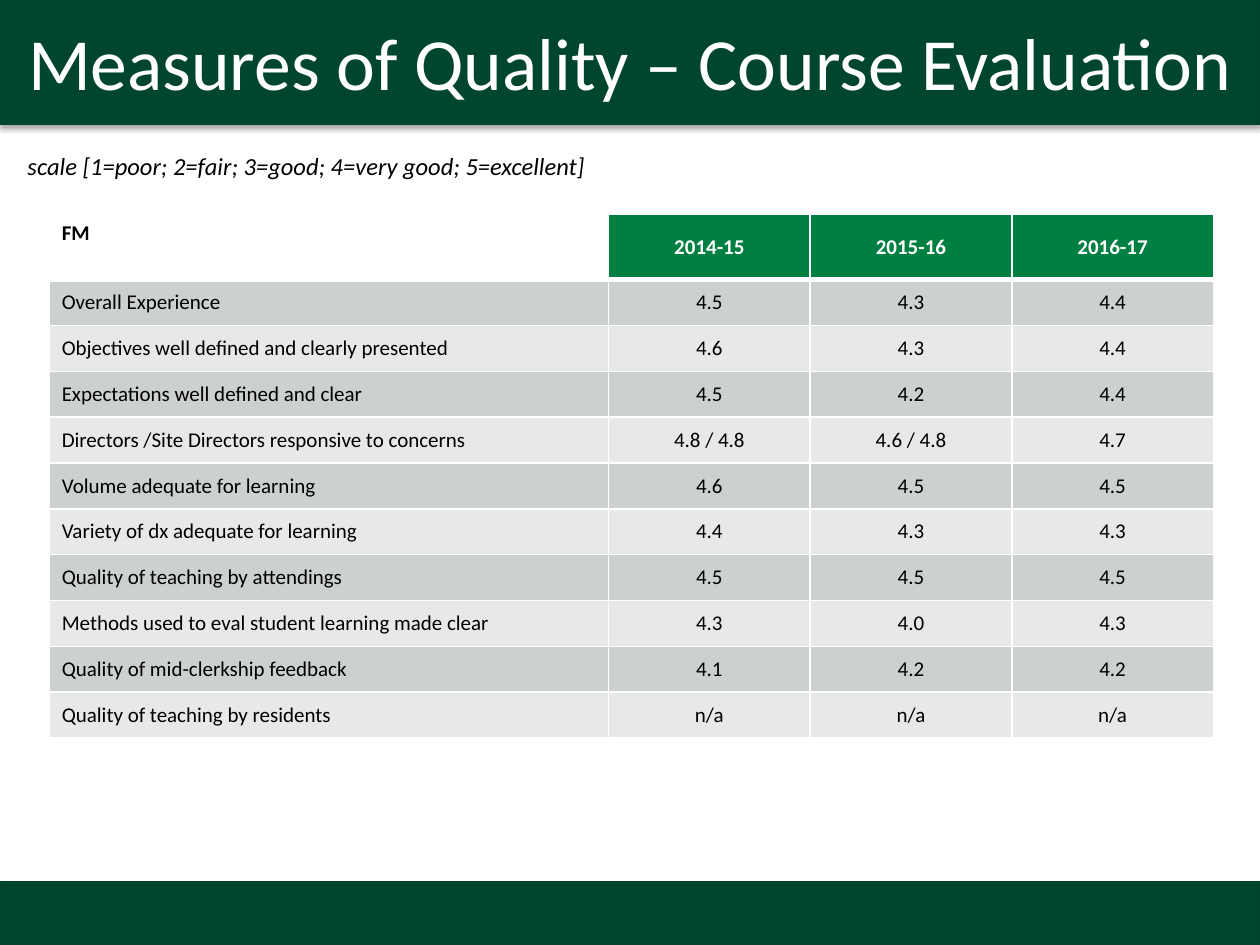
from lxml import etree
from pptx import Presentation
from pptx.dml.color import RGBColor
from pptx.enum.shapes import MSO_SHAPE
from pptx.enum.text import MSO_ANCHOR, MSO_AUTO_SIZE, PP_ALIGN
from pptx.oxml import parse_xml
from pptx.oxml.ns import nsdecls, qn
from pptx.util import Inches, Pt

RECT = MSO_SHAPE.RECTANGLE
TOP, MIDDLE = MSO_ANCHOR.TOP, MSO_ANCHOR.MIDDLE
LEFT, CENTER = PP_ALIGN.LEFT, PP_ALIGN.CENTER
NO_FIT = MSO_AUTO_SIZE.NONE
FONT = "Calibri"


def rgb(color):
    return RGBColor.from_string(color)


def style(p, size, color, align=LEFT, bold=False, italic=False):
    p.alignment = align
    p.font.name, p.font.size = FONT, Pt(size)
    p.font.bold, p.font.italic = bold, italic
    p.font.color.rgb = rgb(color)


prs = Presentation()
prs.slide_width, prs.slide_height = Inches(10), Inches(7.5)
s = prs.slides.add_slide(prs.slide_layouts[5])

# Green bars with a soft shadow
for top, height in ((0, 0.99), (7, 0.5)):
    sp = s.shapes.add_shape(RECT, 0, Inches(top), Inches(10), Inches(height))
    sp.fill.solid()
    sp.fill.fore_color.rgb = rgb("00462D")
    sp.line.color.rgb = rgb("00442D")
    sp.line.width = Pt(0.75)
    sp.shadow.inherit = False
    effects = sp._element.spPr.find(qn("a:effectLst"))
    effects.append(parse_xml(
        f'<a:outerShdw {nsdecls("a")} blurRad="{Pt(3.1)}" dist="{Pt(1.8)}" dir="5400000" '
        'rotWithShape="0"><a:srgbClr val="000000"><a:alpha val="35000"/></a:srgbClr>'
        '</a:outerShdw>'))

# Title, brought in front of the top bar
title = s.shapes.title
title.left, title.top = 0, 0
title.width, title.height = Inches(10), Inches(0.97)
s.shapes._spTree.append(title._element)
tf = title.text_frame
tf.text = "Measures of Quality – Course Evaluation"
tf.word_wrap = True
tf.auto_size = NO_FIT
tf.vertical_anchor = MIDDLE
style(tf.paragraphs[0], 42, "FFFFFF", CENTER)

# Rating scale
box = s.shapes.add_textbox(Inches(0.12), Inches(1.15), Inches(9.5), Inches(0.8))
tf = box.text_frame
tf.word_wrap = True
tf.text = "scale [1=poor; 2=fair; 3=good; 4=very good; 5=excellent]"
style(tf.paragraphs[0], 14, "000000", italic=True)

# Evaluation table
rows = [
    ("FM", "2014-15", "2015-16", "2016-17"),
    ("Overall Experience", "4.5", "4.3", "4.4"),
    ("Objectives well defined and clearly presented", "4.6", "4.3", "4.4"),
    ("Expectations well defined and clear", "4.5", "4.2", "4.4"),
    ("Directors /Site Directors responsive to concerns", "4.8 / 4.8", "4.6 / 4.8", "4.7"),
    ("Volume adequate for learning", "4.6", "4.5", "4.5"),
    ("Variety of dx adequate for learning", "4.4", "4.3", "4.3"),
    ("Quality of teaching by attendings", "4.5", "4.5", "4.5"),
    ("Methods used to eval student learning made clear", "4.3", "4.0", "4.3"),
    ("Quality of mid-clerkship feedback", "4.1", "4.2", "4.2"),
    ("Quality of teaching by residents", "n/a", "n/a", "n/a"),
]
table = s.shapes.add_table(len(rows), len(rows[0]), Inches(0.39), Inches(1.7),
                           Inches(9.24), Inches(4.16)).table
for col, width in zip(table.columns, (4.44, 1.6, 1.6, 1.6)):
    col.width = Inches(width)

for i, row in enumerate(rows):
    header = i == 0
    table.rows[i].height = Inches(0.52 if header else 0.364)
    for j, text in enumerate(row):
        cell = table.cell(i, j)
        corner = header and j == 0
        cell.text = text
        cell.vertical_anchor = TOP if corner else MIDDLE
        style(cell.text_frame.paragraphs[0], 12,
              "FFFFFF" if header and not corner else "000000",
              CENTER if j else LEFT, bold=header)

        # White borders, thicker between the header and the first row
        tc_pr = cell._tc.get_or_add_tcPr()
        for side in ("lnL", "lnR", "lnT", "lnB"):
            thick = (header and side == "lnB") or (i == 1 and side == "lnT")
            ln = etree.SubElement(tc_pr, qn(f"a:{side}"), w=str(Pt(3 if thick else 1)))
            fill = etree.SubElement(ln, qn("a:solidFill"))
            etree.SubElement(fill, qn("a:srgbClr"), val="FFFFFF")

        if corner:
            cell.fill.background()
        else:
            cell.fill.solid()
            band = "CCD1CD" if i % 2 else "E7E9E8"
            cell.fill.fore_color.rgb = rgb("007F42" if header else band)

prs.save("out.pptx")
